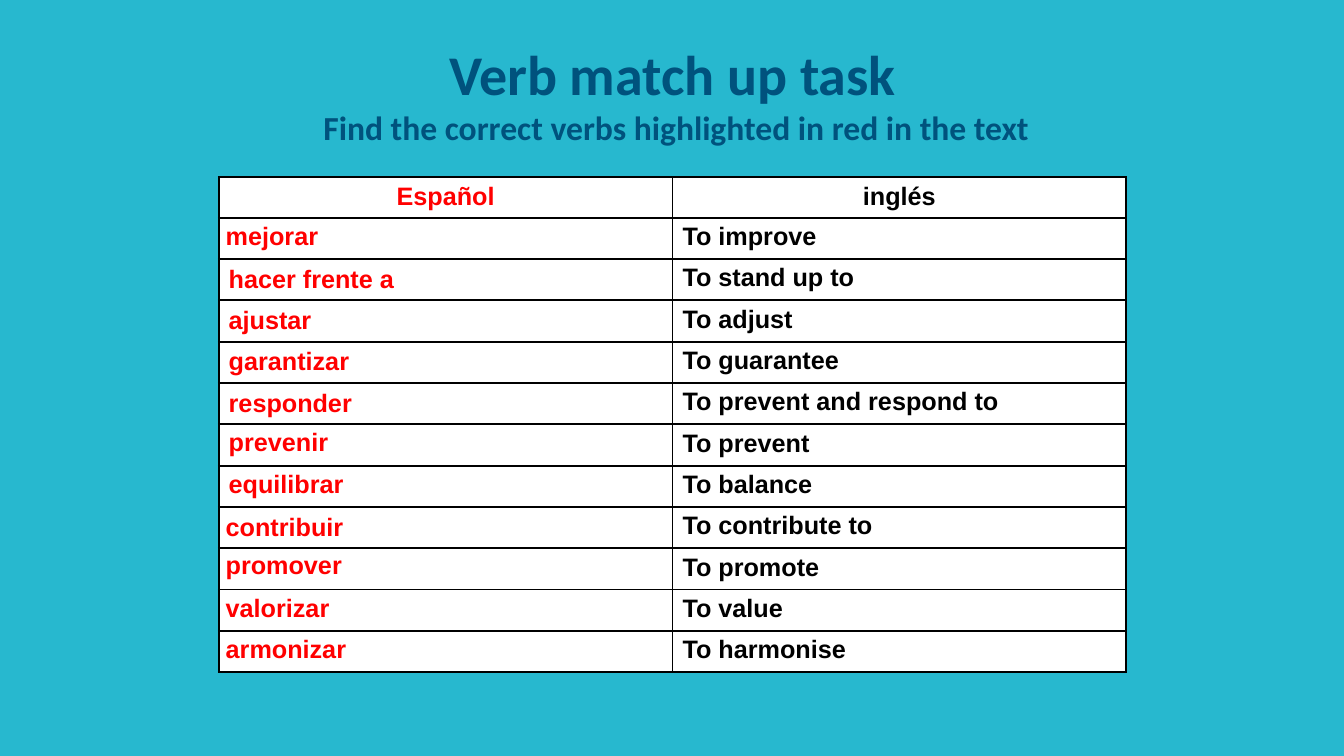
from dataclasses import dataclass

from lxml.etree import SubElement
from pptx import Presentation
from pptx.dml.color import RGBColor
from pptx.enum.text import MSO_ANCHOR, MSO_AUTO_SIZE, PP_ALIGN
from pptx.oxml.ns import qn
from pptx.util import Inches, Pt


@dataclass(frozen=True)
class Theme:
    background: str = "27B8CF"
    title: str = "00527D"
    spanish: str = "FF0000"
    english: str = "000000"
    cell: str = "FFFFFF"
    border: str = "000000"
    border_width: float = 1.5
    title_font: str = "Calibri"
    body_font: str = "Arial"
    title_size: int = 40
    subtitle_size: int = 24
    body_size: int = 18


THEME = Theme()

TABLE_LEFT, TABLE_TOP = 2.17, 1.76
COLUMN_WIDTH = 4.5
HEADER_HEIGHT, ROW_HEIGHT = 0.39, 0.41
ANSWER_HEIGHT = 0.4

# Spanish answer, its left, top and width, English verb
VERBS = [
    ("mejorar", 2.14, 2.14, 1.13, "To improve"),
    ("hacer frente a", 2.17, 2.56, 1.93, "To stand up to"),
    ("ajustar", 2.17, 2.97, 1.03, "To adjust"),
    ("garantizar", 2.17, 3.38, 1.41, "To guarantee"),
    ("responder", 2.17, 3.79, 1.44, "To prevent and respond to"),
    ("prevenir", 2.17, 4.18, 1.2, "To prevent"),
    ("equilibrar", 2.17, 4.6, 1.35, "To balance"),
    ("contribuir", 2.14, 5.02, 1.38, "To contribute to"),
    ("promover", 2.14, 5.4, 1.37, "To promote"),
    ("valorizar", 2.14, 5.83, 1.31, "To value"),
    ("armonizar", 2.14, 6.23, 1.41, "To harmonise"),
]


def add_run(p, text, color, size=THEME.body_size, font=THEME.body_font):
    r = p.add_run()
    r.text = text
    r.font.name = font
    r.font.size = Pt(size)
    r.font.bold = True
    r.font.color.rgb = RGBColor.from_string(color)


def add_text_box(slide, left, top, width, height):
    box = slide.shapes.add_textbox(
        Inches(left), Inches(top), Inches(width), Inches(height))
    tf = box.text_frame
    tf.word_wrap = True
    return tf


def add_title(slide, title, subtitle):
    tf = add_text_box(slide, TABLE_LEFT, 0.3, 2 * COLUMN_WIDTH, 1.25)
    tf.vertical_anchor = MSO_ANCHOR.MIDDLE
    p = tf.paragraphs[0]
    p.alignment = PP_ALIGN.CENTER
    add_run(p, title, THEME.title, THEME.title_size, THEME.title_font)
    p.add_line_break()
    add_run(p, subtitle, THEME.title, THEME.subtitle_size, THEME.title_font)


def style_cell(cell):
    """Give the cell solid borders on all sides and a plain fill."""
    tc_pr = cell._tc.get_or_add_tcPr()
    for side in ("a:lnL", "a:lnR", "a:lnT", "a:lnB"):
        ln = SubElement(tc_pr, qn(side), w=str(Pt(THEME.border_width)))
        fill = SubElement(ln, qn("a:solidFill"))
        SubElement(fill, qn("a:srgbClr"), val=THEME.border)
    cell.fill.solid()
    cell.fill.fore_color.rgb = RGBColor.from_string(THEME.cell)


def add_verb_table(slide):
    table = slide.shapes.add_table(
        len(VERBS) + 1, 2, Inches(TABLE_LEFT), Inches(TABLE_TOP),
        Inches(2 * COLUMN_WIDTH),
        Inches(HEADER_HEIGHT + ROW_HEIGHT * len(VERBS))).table
    for column in table.columns:
        column.width = Inches(COLUMN_WIDTH)
    for i, row in enumerate(table.rows):
        row.height = Inches(ROW_HEIGHT if i else HEADER_HEIGHT)
    for cell in table.iter_cells():
        style_cell(cell)

    headings = (("Español", THEME.spanish), ("inglés", THEME.english))
    for column, (heading, color) in enumerate(headings):
        p = table.cell(0, column).text_frame.paragraphs[0]
        p.alignment = PP_ALIGN.CENTER
        add_run(p, heading, color)
    for i, (*_, english) in enumerate(VERBS, start=1):
        p = table.cell(i, 1).text_frame.paragraphs[0]
        add_run(p, english, THEME.english)


def add_answer(slide, spanish, left, top, width):
    tf = add_text_box(slide, left, top, width, ANSWER_HEIGHT)
    tf.auto_size = MSO_AUTO_SIZE.SHAPE_TO_FIT_TEXT
    add_run(tf.paragraphs[0], spanish, THEME.spanish)


def main():
    prs = Presentation()
    prs.slide_width, prs.slide_height = Inches(13.33), Inches(7.5)
    slide = prs.slides.add_slide(prs.slide_layouts[6])
    slide.background.fill.solid()
    slide.background.fill.fore_color.rgb = RGBColor.from_string(THEME.background)

    add_title(slide, "Verb match up task",
              " Find the correct verbs highlighted in red in the text")
    add_verb_table(slide)
    for spanish, left, top, width, _ in VERBS:
        add_answer(slide, spanish, left, top, width)

    prs.save("out.pptx")


if __name__ == "__main__":
    main()
